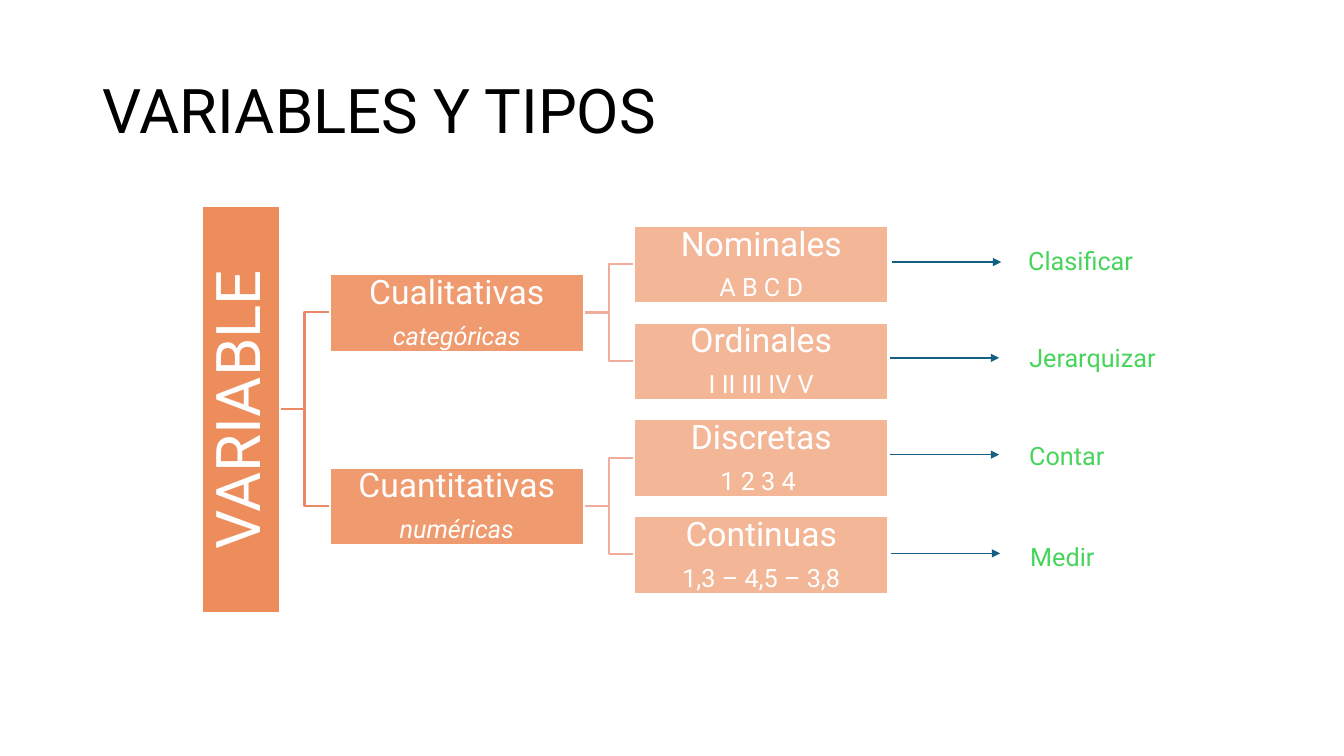
from dataclasses import dataclass

from lxml import etree
from pptx import Presentation
from pptx.dml.color import RGBColor
from pptx.enum.shapes import MSO_CONNECTOR, MSO_SHAPE
from pptx.enum.text import MSO_ANCHOR, MSO_AUTO_SIZE, PP_ALIGN
from pptx.oxml.ns import qn
from pptx.util import Pt

PX = 9144
RECT = MSO_SHAPE.RECTANGLE
STRAIGHT = MSO_CONNECTOR.STRAIGHT
MIDDLE = MSO_ANCHOR.MIDDLE
CENTER = PP_ALIGN.CENTER
GROW = MSO_AUTO_SIZE.SHAPE_TO_FIT_TEXT

BOX_W, BOX_H = 252, 77
ROOT_LEN, ROOT_RIGHT = 404, 277
GROUP_X, LEAF_X = 327, 629
FIRST_Y, ROW_STEP = 262, 96
ARROW_LEN = 108


@dataclass(frozen=True)
class Theme:
    font: str = "Roboto"
    black: str = "000000"
    white: str = "FFFFFF"
    box: str = "E97132"
    root_branch: str = "EB8966"
    leaf_branch: str = "F0AD9B"
    arrow: str = "156082"
    action: str = "47D45A"
    large: int = 44
    medium: int = 24
    small: int = 18
    outline: float = 1.5
    thin: int = 1
    line_spacing: float = 0.9
    gap: float = 0.35


@dataclass(frozen=True)
class Leaf:
    name: str
    example: str
    arrow_x: int
    arrow_y: int
    action: str
    action_x: int
    action_y: int
    action_w: int = 124


@dataclass(frozen=True)
class Group:
    name: str
    detail: str
    leaves: tuple[Leaf, ...]


@dataclass(frozen=True)
class Line:
    text: str
    size: int
    italic: bool = False


THEME = Theme()
GROUPS = (
    Group("Cualitativas", "categóricas", (
        Leaf("Nominales", "A B C D", 885, 260, "Clasificar", 1010, 238),
        Leaf("Ordinales", "I II III IV V", 883, 355, "Jerarquizar", 1011, 335, 148),
    )),
    Group("Cuantitativas", "numéricas", (
        Leaf("Discretas", "1 2 3 4 ", 883, 451, "Contar", 1011, 432),
        Leaf("Continuas", "1,3 – 4,5 – 3,8", 884, 549, "Medir", 1012, 532),
    )),
)


def rgb(color: str) -> RGBColor:
    return RGBColor.from_string(color)


def style_line(shape, color: str, width: float) -> None:
    shape.line.color.rgb = rgb(color)
    shape.line.width = Pt(width)


def write_paragraph(p, line: Line, color: str) -> None:
    p.text = line.text
    p.font.name = THEME.font
    p.font.size = Pt(line.size)
    p.font.italic = line.italic
    p.font.color.rgb = rgb(color)


def add_text(shapes, x: int, y: int, w: int, h: int, line: Line, color: str):
    sp = shapes.add_textbox(x * PX, y * PX, w * PX, h * PX)
    tf = sp.text_frame
    tf.word_wrap = True
    write_paragraph(tf.paragraphs[0], line, color)
    return tf


def add_box(shapes, x: int, y: int, w: int, opacity: int, inset: int,
            lines: tuple[Line, ...], rotation: int = 0) -> None:
    sp = shapes.add_shape(RECT, x * PX, y * PX, w * PX, BOX_H * PX)
    sp.rotation = rotation
    sp.shadow.inherit = False
    sp.fill.solid()
    sp.fill.fore_color.rgb = rgb(THEME.box)
    fill_color = sp._element.spPr.find(qn("a:solidFill")).find(qn("a:srgbClr"))
    etree.SubElement(fill_color, qn("a:alpha"), val=str(opacity * 1000))
    style_line(sp, THEME.white, THEME.outline)
    tf = sp.text_frame
    tf.word_wrap = True
    tf.vertical_anchor = MIDDLE
    tf.margin_left = tf.margin_right = tf.margin_top = tf.margin_bottom = inset * PX
    for i, line in enumerate(lines):
        p = tf.add_paragraph() if i else tf.paragraphs[0]
        write_paragraph(p, line, THEME.white)
        p.alignment = CENTER
        p.line_spacing = THEME.line_spacing
        if i < len(lines) - 1:
            p.space_after = Pt(line.size * THEME.gap)


def add_branch(shapes, x1: int, y1: int, x2: int, y2: int, color: str) -> None:
    mid = (x1 + x2) // 2
    builder = shapes.build_freeform(x1, y1, scale=PX)
    builder.add_line_segments([(mid, y1), (mid, y2), (x2, y2)], close=False)
    sp = builder.convert_to_shape()
    sp.shadow.inherit = False
    sp.fill.background()
    style_line(sp, color, THEME.outline)


def add_arrow(shapes, x: int, y: int) -> None:
    c = shapes.add_connector(STRAIGHT, x * PX, y * PX, (x + ARROW_LEN) * PX, y * PX)
    style_line(c, THEME.arrow, THEME.thin)
    sp_pr = c._element.spPr
    etree.SubElement(sp_pr.find(qn("a:ln")), qn("a:tailEnd"), type="triangle")
    etree.SubElement(sp_pr, qn("a:effectLst"))


def add_tree(shapes) -> None:
    half = BOX_H // 2
    rows = [[FIRST_Y + ROW_STEP * (len(g.leaves) * i + j) for j in range(len(g.leaves))]
            for i, g in enumerate(GROUPS)]
    group_ys = [sum(ys) // len(ys) for ys in rows]
    root_y = sum(group_ys) // len(group_ys)

    for group_y, ys in zip(group_ys, rows):
        add_branch(shapes, ROOT_RIGHT, root_y, GROUP_X, group_y, THEME.root_branch)
        for y in ys:
            add_branch(shapes, GROUP_X + BOX_W, group_y, LEAF_X, y, THEME.leaf_branch)

    root_x = ROOT_RIGHT - half - ROOT_LEN // 2
    add_box(shapes, root_x, root_y - half, ROOT_LEN, 80, 3,
            (Line("VARIABLE", THEME.large),), rotation=270)
    for group, group_y, ys in zip(GROUPS, group_ys, rows):
        add_box(shapes, GROUP_X, group_y - half, BOX_W, 70, 2,
                (Line(group.name, THEME.medium), Line(group.detail, THEME.small, True)))
        for leaf, y in zip(group.leaves, ys):
            add_box(shapes, LEAF_X, y - half, BOX_W, 50, 2,
                    (Line(leaf.name, THEME.medium), Line(leaf.example, THEME.small)))


def add_actions(shapes) -> None:
    for leaf in (leaf for group in GROUPS for leaf in group.leaves):
        add_arrow(shapes, leaf.arrow_x, leaf.arrow_y)
        tf = add_text(shapes, leaf.action_x, leaf.action_y, leaf.action_w, 40,
                      Line(leaf.action, THEME.small), THEME.action)
        tf.auto_size = GROW


def main() -> None:
    prs = Presentation()
    prs.slide_width, prs.slide_height = 1333 * PX, 750 * PX
    s = prs.slides.add_slide(prs.slide_layouts[6])
    tf = add_text(s.shapes, 92, 40, 1150, 145,
                  Line("VARIABLES Y TIPOS", THEME.large), THEME.black)
    tf.vertical_anchor = MIDDLE
    tf.paragraphs[0].line_spacing = THEME.line_spacing
    add_tree(s.shapes)
    add_actions(s.shapes)
    prs.save("out.pptx")


if __name__ == "__main__":
    main()
